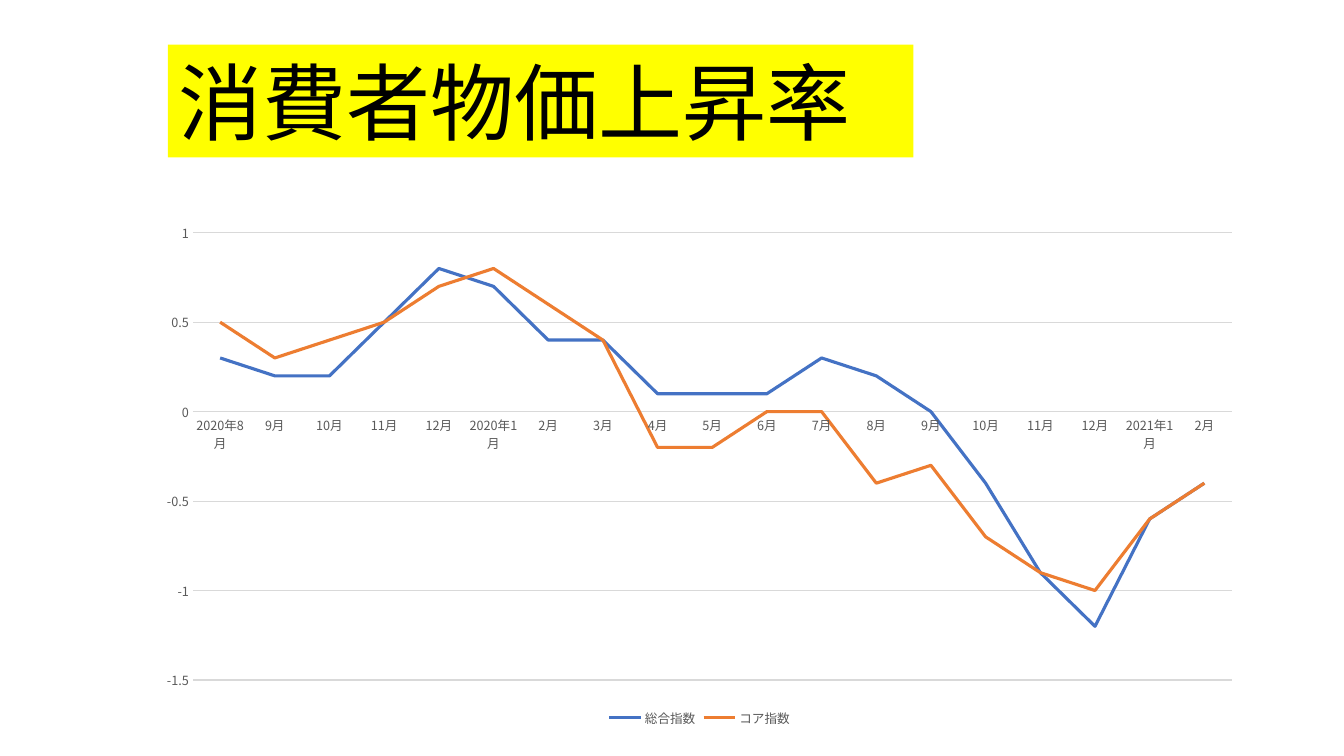
from dataclasses import dataclass
from typing import Any

from lxml import etree
from pptx import Presentation
from pptx import util as u
from pptx.chart import data
from pptx.dml import color
from pptx.enum import chart as kinds
from pptx.enum import text
from pptx.oxml import ns

FACE = "Noto Sans CJK JP"
GRAY, PALE = "595959", "D9D9D9"


@dataclass
class Line:
    name: str
    hue: str
    vals: list[float]


MONTHS = [
    "2020年8月", "9月", "10月", "11月", "12月",
    "2020年1月", "2月", "3月", "4月", "5月", "6月", "7月",
    "8月", "9月", "10月", "11月", "12月", "2021年1月", "2月",
]
LINES = [
    Line("総合指数", "4472C4",
         [0.3, 0.2, 0.2, 0.5, 0.8, 0.7, 0.4, 0.4, 0.1, 0.1,
          0.1, 0.3, 0.2, 0, -0.4, -0.9, -1.2, -0.6, -0.4]),
    Line("コア指数", "ED7D31",
         [0.5, 0.3, 0.4, 0.5, 0.7, 0.8, 0.6, 0.4, -0.2, -0.2,
          0, 0, -0.4, -0.3, -0.7, -0.9, -1, -0.6, -0.4]),
]
PLOT = {"x": 0.043, "y": 0.037, "w": 0.937, "h": 0.865}


def rgb(code: str) -> color.RGBColor:
    return color.RGBColor.from_string(code)


def apply(item: Any, **vals: Any) -> None:
    for key, val in vals.items():
        setattr(item, key, val)


def style(font: Any, size: float, hue: str) -> None:
    apply(font, name=FACE, size=u.Pt(size))
    font.color.rgb = rgb(hue)


def stroke(line: Any, hue: str, width: float) -> None:
    line.color.rgb = rgb(hue)
    line.width = u.Pt(width)


def widen(root: Any) -> None:
    for latin in list(root.iter(ns.qn("a:latin"))):
        east = etree.Element(ns.qn("a:ea"))
        east.set("typeface", FACE)
        latin.addnext(east)


def place(chart: Any) -> None:
    area = chart.element.find(".//" + ns.qn("c:plotArea"))
    for old in area.findall(ns.qn("c:layout")):
        area.remove(old)
    frame = etree.Element(ns.qn("c:layout"))
    area.insert(0, frame)
    manual = etree.SubElement(frame, ns.qn("c:manualLayout"))
    rules = {"layoutTarget": "inner", "xMode": "edge", "yMode": "edge", **PLOT}
    for key, val in rules.items():
        etree.SubElement(manual, ns.qn(f"c:{key}")).set("val", str(val))


def head(slide: Any) -> None:
    title = slide.shapes.title
    apply(title, left=u.Pt(120), top=u.Pt(31.8),
          width=u.Pt(532.4), height=u.Pt(80.6))
    title.fill.solid()
    title.fill.fore_color.rgb = rgb("FFFF00")
    frame = title.text_frame
    apply(frame, text="消費者物価上昇率", word_wrap=True,
          auto_size=text.MSO_AUTO_SIZE.NONE,
          vertical_anchor=text.MSO_ANCHOR.BOTTOM)
    para = frame.paragraphs[0]
    apply(para, alignment=text.PP_ALIGN.LEFT, line_spacing=0.9)
    style(para.runs[0].font, 60, "000000")


def graph(slide: Any) -> None:
    table = data.CategoryChartData()
    table.categories = MONTHS
    for line in LINES:
        table.add_series(line.name, line.vals)
    chart = slide.shapes.add_chart(
        kinds.XL_CHART_TYPE.LINE, u.Pt(103.7), u.Pt(152.6),
        u.Pt(792), u.Pt(369.4), table).chart
    apply(chart, has_title=False, has_legend=True)
    style(chart.font, 10, "000000")
    apply(chart.legend, include_in_layout=False,
          position=kinds.XL_LEGEND_POSITION.BOTTOM)
    style(chart.legend.font, 9, GRAY)

    cats, vals = chart.category_axis, chart.value_axis
    for axis in (cats, vals):
        apply(axis, major_tick_mark=kinds.XL_TICK_MARK.NONE,
              minor_tick_mark=kinds.XL_TICK_MARK.NONE)
        style(axis.tick_labels.font, 9, GRAY)
    stroke(cats.format.line, PALE, 0.75)
    apply(vals, minimum_scale=-1.5, maximum_scale=1, major_unit=0.5,
          has_major_gridlines=True)
    stroke(vals.major_gridlines.format.line, PALE, 0.75)
    vals.format.line.fill.background()

    plot = chart.plots[0]
    plot.vary_by_categories = False
    for line, row in zip(LINES, plot.series):
        row.smooth = False
        row.marker.style = kinds.XL_MARKER_STYLE.NONE
        stroke(row.format.line, line.hue, 2.25)
    place(chart)
    widen(chart.element)


def main() -> None:
    deck = Presentation()
    apply(deck, slide_width=u.Pt(960), slide_height=u.Pt(540))
    slide = deck.slides.add_slide(deck.slide_layouts[5])
    head(slide)
    widen(slide.element)
    graph(slide)
    deck.save("out.pptx")


if __name__ == "__main__":
    main()
